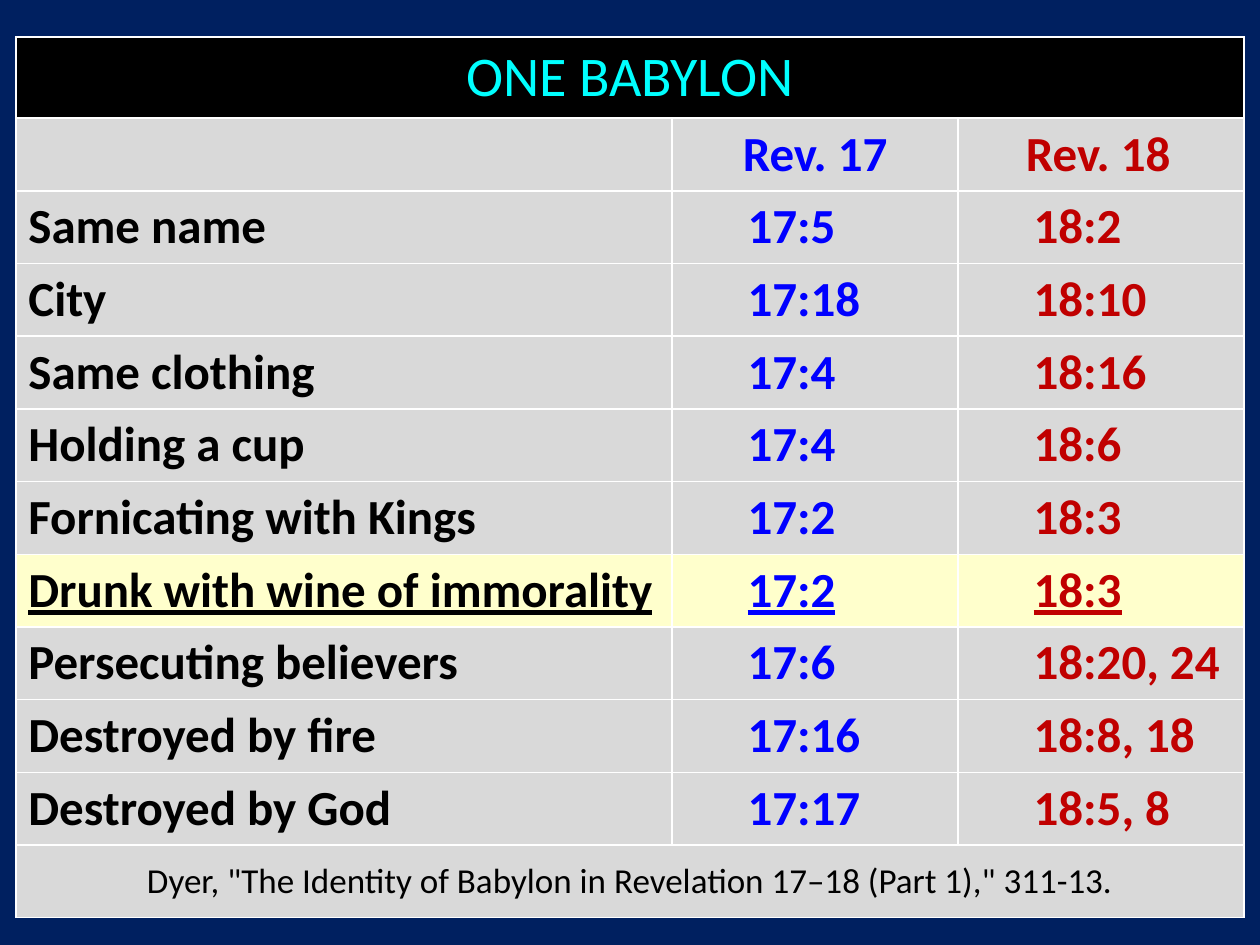
import pptx
import pptx.dml.color
import pptx.enum.text
import pptx.util
from lxml import etree
from pptx.oxml.ns import qn

Pt = pptx.util.Pt
ALIGN = pptx.enum.text.PP_ALIGN

NAVY, BLACK, WHITE = "002060", "000000", "FFFFFF"
CYAN, BLUE, RED = "00FFFF", "0000FF", "C00000"
GRAY, YELLOW = "D9D9D9", "FFFFCC"

COLUMN_WIDTHS = [375, 163.5, 163.5]
COLUMN_COLORS = [BLACK, BLUE, RED]
COLUMN_INDENTS = [0, 36, 36]
TITLE_HEIGHT, ROW_HEIGHT = 46.3, 41.55

TITLE = "ONE BABYLON"
SOURCE = 'Dyer, "The Identity of Babylon in Revelation 17–18 (Part 1)," 311-13.'
PARALLELS = [
    ("Same name", "17:5", "18:2"),
    ("City", "17:18", "18:10"),
    ("Same clothing", "17:4", "18:16"),
    ("Holding a cup", "17:4", "18:6"),
    ("Fornicating with Kings", "17:2", "18:3"),
    ("Drunk with wine of immorality", "17:2", "18:3"),
    ("Persecuting believers", "17:6", "18:20, 24"),
    ("Destroyed by fire", "17:16", "18:8, 18"),
    ("Destroyed by God", "17:17", "18:5, 8"),
]
HIGHLIGHTED = "Drunk with wine of immorality"


def rgb(color):
    return pptx.dml.color.RGBColor.from_string(color)


class SlideBuilder:
    def __init__(self, deck, font="Calibri"):
        self.font = font
        self.page = deck.slides.add_slide(deck.slide_layouts[6])

    def background(self, color):
        fill = self.page.background.fill
        fill.solid()
        fill.fore_color.rgb = rgb(color)

    def table(self, left, top, widths, heights):
        frame = self.page.shapes.add_table(
            len(heights), len(widths), Pt(left), Pt(top), Pt(sum(widths)), Pt(sum(heights)))
        grid = frame.table
        for column, width in zip(grid.columns, widths):
            column.width = Pt(width)
        for row, height in zip(grid.rows, heights):
            row.height = Pt(height)
        for cell in grid.iter_cells():
            self.borders(cell, WHITE, 1)
            self.fill(cell, GRAY)
        return grid

    def borders(self, cell, color, width):
        properties = cell._tc.get_or_add_tcPr()
        for side in ("a:lnL", "a:lnR", "a:lnT", "a:lnB"):
            line = etree.SubElement(properties, qn(side), w=str(Pt(width)))
            solid = etree.SubElement(line, qn("a:solidFill"))
            etree.SubElement(solid, qn("a:srgbClr"), val=color)

    def fill(self, cell, color):
        cell.fill.solid()
        cell.fill.fore_color.rgb = rgb(color)

    def text(self, cell, text, color, size=28, bold=True, underline=False,
             align=ALIGN.LEFT, indent=0):
        cell.vertical_anchor = pptx.enum.text.MSO_ANCHOR.MIDDLE
        para = cell.text_frame.paragraphs[0]
        para.alignment = align
        para._p.get_or_add_pPr().set("marL", str(Pt(indent)))
        span = para.add_run()
        span.text = text
        font = span.font
        font.name, font.size, font.bold = self.font, Pt(size), bold
        font.underline = underline
        font.color.rgb = rgb(color)


def main():
    deck = pptx.Presentation()
    deck.slide_width, deck.slide_height = Pt(720), Pt(540)
    builder = SlideBuilder(deck)
    builder.background(NAVY)

    heights = [TITLE_HEIGHT] + [ROW_HEIGHT] * (len(PARALLELS) + 2)
    grid = builder.table(9, 21.2, COLUMN_WIDTHS, heights)
    last = len(heights) - 1
    for row in (0, last):
        grid.cell(row, 0).merge(grid.cell(row, 2))

    builder.fill(grid.cell(0, 0), BLACK)
    builder.text(grid.cell(0, 0), TITLE, CYAN, size=32, bold=False, align=ALIGN.CENTER)
    builder.text(grid.cell(1, 1), "Rev. 17", BLUE, align=ALIGN.CENTER)
    builder.text(grid.cell(1, 2), "Rev. 18", RED, indent=31.5)
    builder.text(grid.cell(last, 0), SOURCE, BLACK, size=20, bold=False, align=ALIGN.CENTER)

    for row, parallel in enumerate(PARALLELS, start=2):
        highlighted = parallel[0] == HIGHLIGHTED
        for column, text in enumerate(parallel):
            cell = grid.cell(row, column)
            if highlighted:
                builder.fill(cell, YELLOW)
            builder.text(cell, text, COLUMN_COLORS[column], underline=highlighted,
                         indent=COLUMN_INDENTS[column])

    deck.save("out.pptx")


if __name__ == "__main__":
    main()
